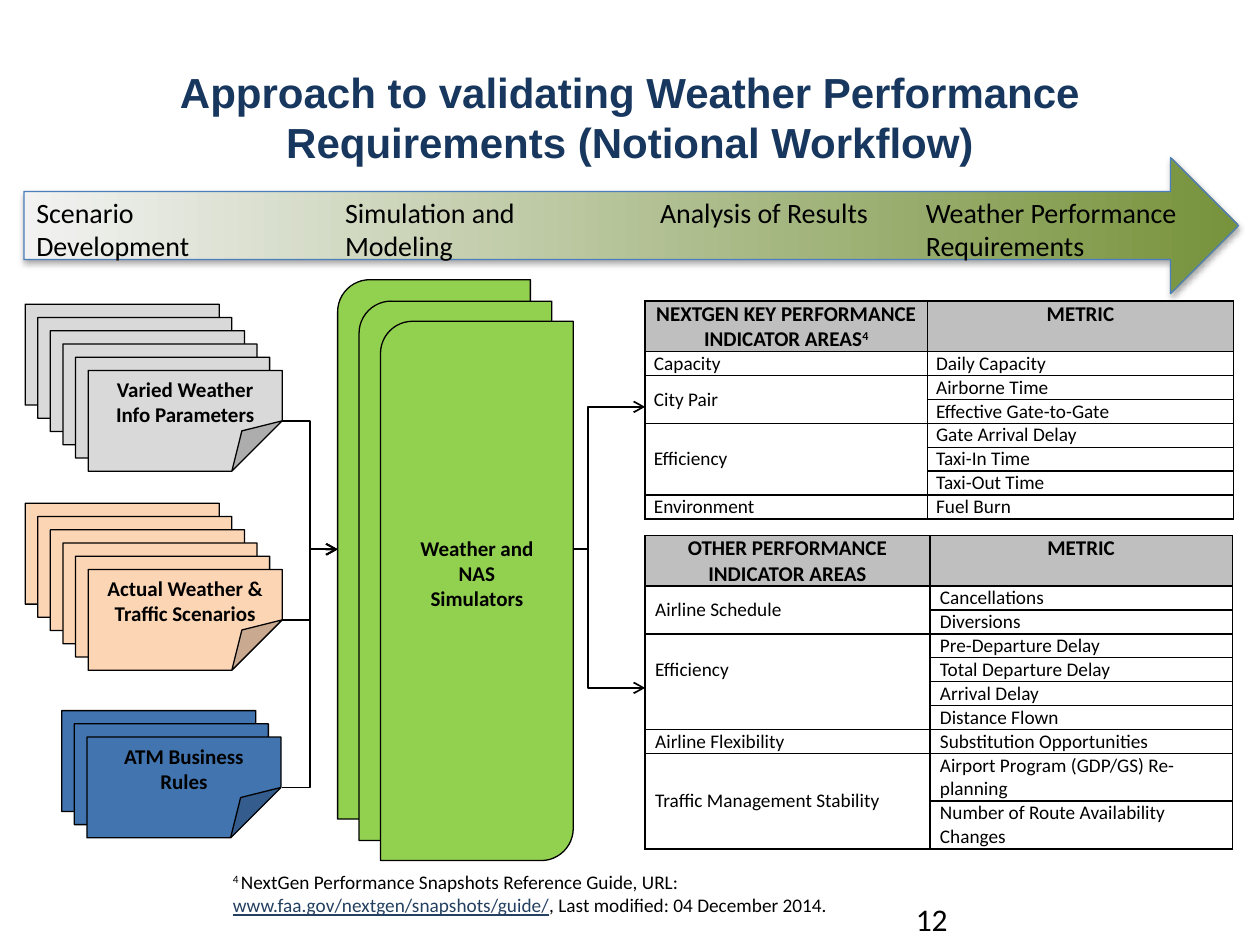
from dataclasses import dataclass
from typing import NamedTuple

from lxml import etree
from pptx import Presentation
from pptx.dml.color import RGBColor
from pptx.enum.shapes import MSO_CONNECTOR, MSO_SHAPE
from pptx.enum.text import MSO_ANCHOR, MSO_AUTO_SIZE, PP_ALIGN
from pptx.oxml.ns import qn
from pptx.util import Inches, Pt

ELBOW = MSO_CONNECTOR.ELBOW
ARROW, SHEET, PANEL = MSO_SHAPE.RIGHT_ARROW, MSO_SHAPE.FOLDED_CORNER, MSO_SHAPE.ROUND_2_DIAG_RECTANGLE
TOP, MIDDLE = MSO_ANCHOR.TOP, MSO_ANCHOR.MIDDLE
LEFT, CENTER = PP_ALIGN.LEFT, PP_ALIGN.CENTER
FIT, FIXED = MSO_AUTO_SIZE.SHAPE_TO_FIT_TEXT, MSO_AUTO_SIZE.NONE


@dataclass(frozen=True)
class Theme:
    heading_font: str = "Arial"
    body_font: str = "Calibri"
    ink: str = "000000"
    title: str = "17375E"
    link: str = "244061"
    header: str = "BFBFBF"
    simulator: str = "92D050"
    weather: str = "D9D9D9"
    scenario: str = "FCD5B5"
    rules: str = "4274AF"
    arrow_start: str = "F2F2F2"
    arrow_end: str = "77933C"
    arrow_line: str = "4B7EBC"
    title_size: float = 24
    number_size: float = 18
    stage_size: float = 16
    label_size: float = 12
    small_size: float = 11
    outline: float = 0.75
    rule: float = 1


THEME = Theme()


class Box(NamedTuple):
    left: float
    top: float
    width: float
    height: float

    def lengths(self):
        return [Inches(value) for value in self]


class Span(NamedTuple):
    text: str
    color: str = THEME.ink
    underline: bool = False
    raised: bool = False


class Stack(NamedTuple):
    text: str
    color: str
    left: float
    top: float
    count: int


class Group(NamedTuple):
    area: str
    metrics: tuple
    bottom: float = 0


class MetricTable(NamedTuple):
    box: Box
    columns: tuple
    inset: float
    heading: list
    groups: list


STAGES = [
    ("Scenario Development", Box(0.19, 1.5, 1.94, 0.64)),
    ("Simulation and Modeling", Box(2.64, 1.5, 1.94, 0.64)),
    ("Analysis of Results", Box(5.14, 1.5, 1.94, 0.37)),
    ("Weather Performance Requirements", Box(7.25, 1.5, 2.58, 0.64)),
]
STACKS = [
    Stack("Varied Weather Info Parameters", THEME.weather, 0.7, 2.94, 6),
    Stack("Actual Weather & Traffic Scenarios", THEME.scenario, 0.7, 4.52, 6),
    Stack("ATM Business Rules", THEME.rules, 0.69, 5.85, 3),
]
PANELS = [(2.68, 2.22), (2.85, 2.39), (3.02, 2.55)]
CONNECTORS = [((2.24, y), (2.68, 4.36)) for y in (3.34, 4.92, 6.25)]
CONNECTORS += [((4.21, 4.36), (5.12, y)) for y in (3.23, 5.46)]
ROW, HEADER_ROW, WRAP_AT = 0.19, 0.4, 30
TABLES = [
    MetricTable(
        Box(5.12, 2.39, 4.67, 1.73), (2.24, 2.43), 0.07,
        [Span("NEXTGEN KEY PERFORMANCE INDICATOR AREAS"), Span("4", raised=True)],
        [
            Group("Capacity", ("Daily Capacity",)),
            Group("City Pair", ("Airborne Time", "Effective Gate-to-Gate")),
            Group("Efficiency", ("Gate Arrival Delay", "Taxi-In Time", "Taxi-Out Time")),
            Group("Environment", ("Fuel Burn",)),
        ],
    ),
    MetricTable(
        Box(5.12, 4.25, 4.66, 2.49), (2.26, 2.4), 0.08,
        [Span("OTHER PERFORMANCE INDICATOR AREAS")],
        [
            Group("Airline Schedule", ("Cancellations", "Diversions")),
            Group("Efficiency", ("Pre-Departure Delay", "Total Departure Delay",
                                 "Arrival Delay", "Distance Flown"), ROW),
            Group("Airline Flexibility", ("Substitution Opportunities",)),
            Group("Traffic Management Stability", ("Airport Program (GDP/GS) Re-planning",
                                                   "Number of Route Availability Changes")),
        ],
    ),
]


def apply(target, values: dict) -> None:
    for name, value in values.items():
        setattr(target, name, value)


def write(frame, spans: list, size: float, bold=False, align=LEFT, font=THEME.body_font) -> None:
    para = frame.paragraphs[0]
    para.alignment = align
    for span in spans:
        run = para.add_run()
        run.text = span.text
        apply(run.font, {"name": font, "size": Pt(size), "bold": bold, "underline": span.underline})
        run.font.color.rgb = RGBColor.from_string(span.color)
        if span.raised:
            run._r.get_or_add_rPr().set("baseline", "30000")


def add_text(page, box: Box, spans: list, size: float, bold=False, align=LEFT, fit=FIT) -> None:
    frame = page.shapes.add_textbox(*box.lengths()).text_frame
    apply(frame, {"word_wrap": True, "auto_size": fit})
    write(frame, spans, size, bold, align)


def add_outlined(page, kind, box: Box, line: str = THEME.ink):
    shape = page.shapes.add_shape(kind, *box.lengths())
    shape.shadow.inherit = False
    shape.line.color.rgb = RGBColor.from_string(line)
    shape.line.width = Pt(THEME.outline)
    return shape


def add_filled(page, kind, box: Box, color: str):
    shape = add_outlined(page, kind, box)
    shape.fill.solid()
    shape.fill.fore_color.rgb = RGBColor.from_string(color)
    return shape


def add_stage_arrow(page) -> None:
    shape = add_outlined(page, ARROW, Box(0.19, 1.25, 9.64, 1.08), THEME.arrow_line)
    shape.fill.gradient()
    shape.fill.gradient_angle = 0
    for stop, color in zip(shape.fill.gradient_stops, (THEME.arrow_start, THEME.arrow_end)):
        stop.color.rgb = RGBColor.from_string(color)
    effects = shape._element.spPr.find(qn("a:effectLst"))
    shadow = etree.SubElement(effects, qn("a:outerShdw"), blurRad=str(Pt(3.1)),
                              dist=str(Pt(1.8)), dir="5400000", rotWithShape="0")
    tone = etree.SubElement(shadow, qn("a:srgbClr"), val=THEME.ink)
    etree.SubElement(tone, qn("a:alpha"), val="35000")


def add_elbow(page, start: tuple, end: tuple) -> None:
    connector = page.shapes.add_connector(ELBOW, *(Inches(value) for value in start + end))
    connector.line.color.rgb = RGBColor.from_string(THEME.ink)
    connector.line.width = Pt(THEME.rule)
    properties = connector._element.spPr
    etree.SubElement(properties.find(qn("a:ln")), qn("a:tailEnd"), type="arrow")
    etree.SubElement(properties, qn("a:effectLst"))


def add_stack(page, stack: Stack) -> None:
    for back in reversed(range(stack.count)):
        box = Box(stack.left - 0.1 * back, stack.top - 0.105 * back, 1.54, 0.8)
        sheet = add_filled(page, SHEET, box, stack.color)
        guides = sheet._element.spPr.find(qn("a:prstGeom")).get_or_add_avLst()
        etree.SubElement(guides, qn("a:gd"), name="adj", fmla="val 50000")
    add_text(page, Box(stack.left, stack.top, 1.54, 0.51), [Span(stack.text)],
             THEME.label_size, True, CENTER)


def format_cell(cell, inset: float, header: bool) -> None:
    apply(cell, {"margin_left": Inches(inset), "margin_right": Inches(inset), "margin_top": 0,
                 "margin_bottom": 0, "vertical_anchor": TOP if header else MIDDLE})
    cell.fill.background()
    if header:
        cell.fill.solid()
        cell.fill.fore_color.rgb = RGBColor.from_string(THEME.header)
    properties = cell._tc.get_or_add_tcPr()
    for position, side in enumerate(("lnL", "lnR", "lnT", "lnB")):
        border = etree.Element(qn(f"a:{side}"), w=str(Pt(THEME.rule)))
        fill = etree.SubElement(border, qn("a:solidFill"))
        etree.SubElement(fill, qn("a:srgbClr"), val=THEME.ink)
        properties.insert(position, border)


def add_metric_table(page, content: MetricTable) -> None:
    metrics = [metric for group in content.groups for metric in group.metrics]
    table = page.shapes.add_table(len(metrics) + 1, 2, *content.box.lengths()).table
    apply(table, {"first_row": False, "horz_banding": False})
    for column, width in zip(table.columns, content.columns):
        column.width = Inches(width)
    heights = [HEADER_ROW] + [ROW * (2 if len(metric) > WRAP_AT else 1) for metric in metrics]
    for index, height in enumerate(heights):
        table.rows[index].height = Inches(height)
        for cell in table.rows[index].cells:
            format_cell(cell, content.inset, index == 0)
    for column, spans in enumerate((content.heading, [Span("METRIC")])):
        write(table.cell(0, column).text_frame, spans, THEME.label_size, True, CENTER)
    for index, metric in enumerate(metrics, 1):
        write(table.cell(index, 1).text_frame, [Span(metric)], THEME.small_size)
    first = 1
    for group in content.groups:
        cell, last = table.cell(first, 0), first + len(group.metrics) - 1
        if last > first:
            cell.merge(table.cell(last, 0))
        cell.margin_bottom = Inches(group.bottom)
        write(cell.text_frame, [Span(group.area)], THEME.small_size)
        first = last + 1


def main() -> None:
    deck = Presentation()
    apply(deck, {"slide_width": Inches(10), "slide_height": Inches(7.5)})
    page = deck.slides.add_slide(deck.slide_layouts[5])
    title = page.shapes.title
    apply(title, dict(zip(("left", "top", "width", "height"), Box(0.5, 0.3, 9, 1.25).lengths())))
    apply(title.text_frame, {"word_wrap": True, "vertical_anchor": MIDDLE, "auto_size": FIXED})
    heading = "Approach to validating Weather Performance Requirements (Notional Workflow)"
    write(title.text_frame, [Span(heading, THEME.title)], THEME.title_size, True, CENTER,
          THEME.heading_font)
    add_stage_arrow(page)
    for text, box in STAGES:
        add_text(page, box, [Span(text)], THEME.stage_size)
    for start, end in CONNECTORS:
        add_elbow(page, start, end)
    for left, top in PANELS:
        add_filled(page, PANEL, Box(left, top, 1.53, 4.28), THEME.simulator)
    add_text(page, Box(3.19, 4.2, 1.19, 0.71), [Span("Weather and NAS Simulators")],
             THEME.label_size, True, CENTER)
    for stack in STACKS:
        add_stack(page, stack)
    for table in TABLES:
        add_metric_table(page, table)
    footnote = [
        Span("4 ", raised=True),
        Span("NextGen Performance Snapshots Reference Guide, URL: "),
        Span("www.faa.gov/nextgen/snapshots/guide/", THEME.link, True),
        Span(", Last modified: 04 December 2014."),
    ]
    add_text(page, Box(1.75, 6.86, 6.16, 0.47), footnote, THEME.small_size)
    add_text(page, Box(7.17, 7.09, 2.33, 0.24), [Span("12")], THEME.number_size, fit=FIXED)
    deck.save("out.pptx")


if __name__ == "__main__":
    main()
